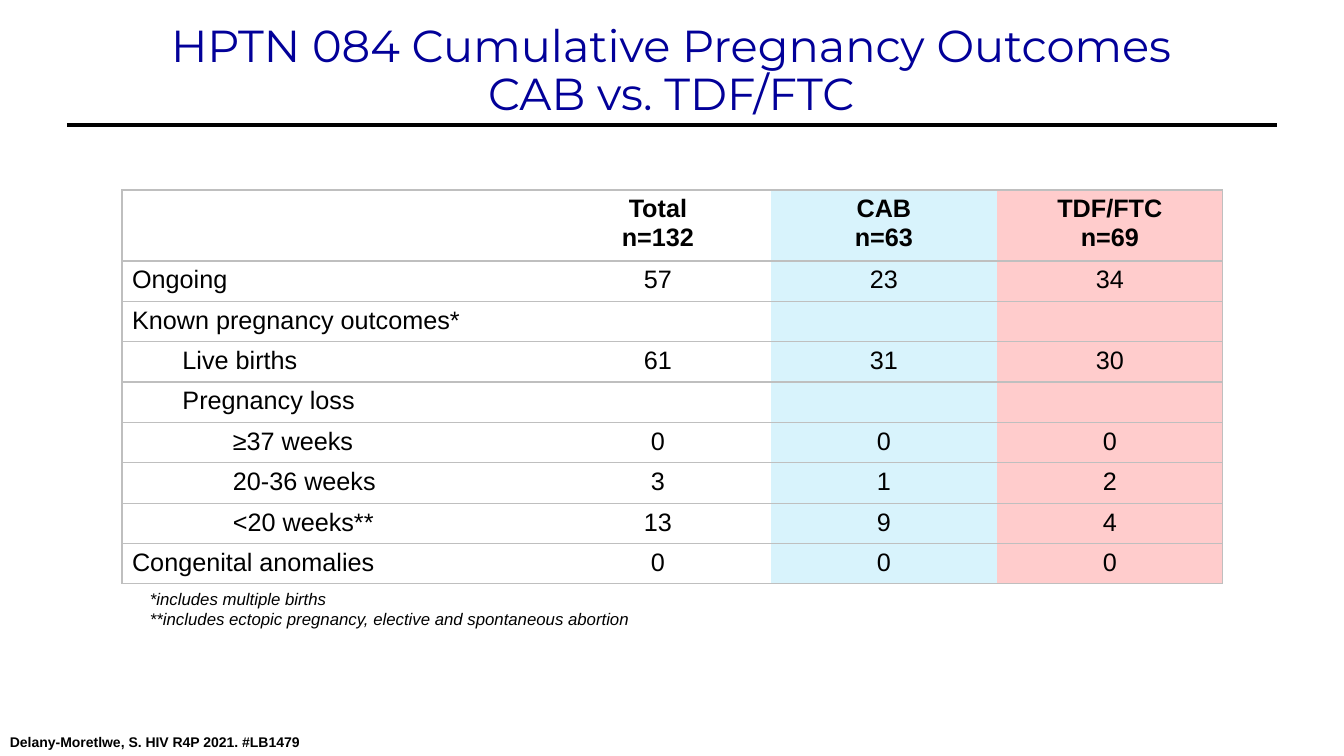
from dataclasses import dataclass

from lxml.etree import SubElement
from pptx import Presentation
from pptx.dml.color import RGBColor
from pptx.enum.shapes import MSO_CONNECTOR
from pptx.enum.text import MSO_ANCHOR, PP_ALIGN
from pptx.oxml import parse_xml
from pptx.oxml.ns import nsdecls, qn
from pptx.util import Pt

SCALE = 914400 / 100.8


def px(length):
    """Turn px into EMU."""
    return round(length * SCALE)


@dataclass(frozen=True)
class Theme:
    """Colours, fonts and type sizes of the slide."""
    navy: str = "020099"
    black: str = "000000"
    grid: str = "BFBFBF"
    column_fills: tuple = (None, None, "D8F3FC", "FFCCCC")
    heading_font: str = "Montserrat"
    body_font: str = "Arial"
    title_size: int = 32
    table_size: int = 18
    note_size: int = 12
    source_size: int = 10


class Slide:
    """Draws styled elements on one page."""

    def __init__(self, page, theme):
        """Keep the page and its theme."""
        self.page = page
        self.theme = theme

    def style(self, para, size, color=None, font=None, bold=False, italic=False):
        """Format every run of a paragraph."""
        for span in para.runs:
            span.font.name = font or self.theme.body_font
            span.font.size = Pt(size)
            span.font.bold = bold
            span.font.italic = italic
            span.font.color.rgb = RGBColor.from_string(color or self.theme.black)

    def text(self, bounds, words, size, align=PP_ALIGN.LEFT, spacing=None,
             anchor=MSO_ANCHOR.TOP, **look):
        """Add a wrapped text box."""
        box = self.page.shapes.add_textbox(*map(px, bounds))
        frame = box.text_frame
        frame.word_wrap = True
        frame.vertical_anchor = anchor
        frame.text = words
        for para in frame.paragraphs:
            para.alignment = align
            para.line_spacing = spacing
            self.style(para, size, **look)

    def rule(self, left, right, y, width):
        """Add a horizontal line."""
        line = self.page.shapes.add_connector(
            MSO_CONNECTOR.STRAIGHT, px(left), px(y), px(right), px(y))
        line.line.color.rgb = RGBColor.from_string(self.theme.black)
        line.line.width = Pt(width)
        SubElement(line._element.spPr, qn("a:effectLst"))

    def borders(self, cell, visible):
        """Draw the visible sides of a cell and clear the others."""
        properties = cell._tc.get_or_add_tcPr()
        for index, side in enumerate("LRTB"):
            paint = (f'<a:solidFill><a:srgbClr val="{self.theme.grid}"/></a:solidFill>'
                     if side in visible else "<a:noFill/>")
            properties.insert(index, parse_xml(
                f'<a:ln{side} {nsdecls("a")} w="{Pt(1)}">{paint}</a:ln{side}>'))

    def cell(self, cell, words, column, bold, level):
        """Fill and format one table cell."""
        fill = self.theme.column_fills[column]
        if fill:
            cell.fill.solid()
            cell.fill.fore_color.rgb = RGBColor.from_string(fill)
        else:
            cell.fill.background()
        last = len(self.theme.column_fills) - 1
        self.borders(cell, "TB" + {0: "L", last: "R"}.get(column, ""))
        cell.text = words
        for para in cell.text_frame.paragraphs:
            para.alignment = PP_ALIGN.CENTER if column else PP_ALIGN.LEFT
            para.font.size = Pt(self.theme.table_size)
            if level and not column:
                para.level = level
                para._p.get_or_add_pPr().set("marL", str(px(50.4 * level)))
            self.style(para, self.theme.table_size, bold=bold)

    def table(self, left, top, widths, header_height, body_height, rows):
        """Add the table from (level, label, values) rows."""
        frame = self.page.shapes.add_table(
            len(rows), len(widths), px(left), px(top),
            px(sum(widths)), px(header_height + body_height))
        table = frame.table
        table.first_row = table.horz_banding = False
        for column, width in zip(table.columns, widths):
            column.width = px(width)
        for index, (level, *words) in enumerate(rows):
            table.rows[index].height = (
                px(body_height / (len(rows) - 1)) if index else px(header_height))
            for column, word in enumerate(words):
                self.cell(table.cell(index, column), word, column, index == 0, level)


OUTCOMES = [
    (0, "", "Total\nn=132", "CAB\nn=63", "TDF/FTC\nn=69"),
    (0, "Ongoing", "57", "23", "34"),
    (0, "Known pregnancy outcomes*", "", "", ""),
    (1, "Live births", "61", "31", "30"),
    (1, "Pregnancy loss", "", "", ""),
    (2, "≥37 weeks", "0", "0", "0"),
    (2, "20-36 weeks", "3", "1", "2"),
    (2, "<20 weeks**", "13", "9", "4"),
    (0, "Congenital anomalies", "0", "0", "0"),
]


def main():
    """Build and save the slide."""
    deck = Presentation()
    deck.slide_width, deck.slide_height = px(1344), px(756)
    theme = Theme()
    slide = Slide(deck.slides.add_slide(deck.slide_layouts[6]), theme)
    slide.text((14, -1, 1315, 146), "HPTN 084 Cumulative Pregnancy Outcomes\vCAB vs. TDF/FTC",
               theme.title_size, align=PP_ALIGN.CENTER, spacing=0.9,
               anchor=MSO_ANCHOR.MIDDLE, color=theme.navy, font=theme.heading_font)
    slide.rule(67, 1277, 125, 3)
    slide.text((0, 729, 671, 27), "Delany-Moretlwe, S. HIV R4P 2021. #LB1479",
               theme.source_size, bold=True)
    slide.table(122, 190, [423, 226, 226, 226], 71, 323, OUTCOMES)
    slide.text((140, 584, 1064, 50),
               "*includes multiple births\n"
               "**includes ectopic pregnancy, elective and spontaneous abortion",
               theme.note_size, italic=True)
    deck.save("out.pptx")


if __name__ == "__main__":
    main()
